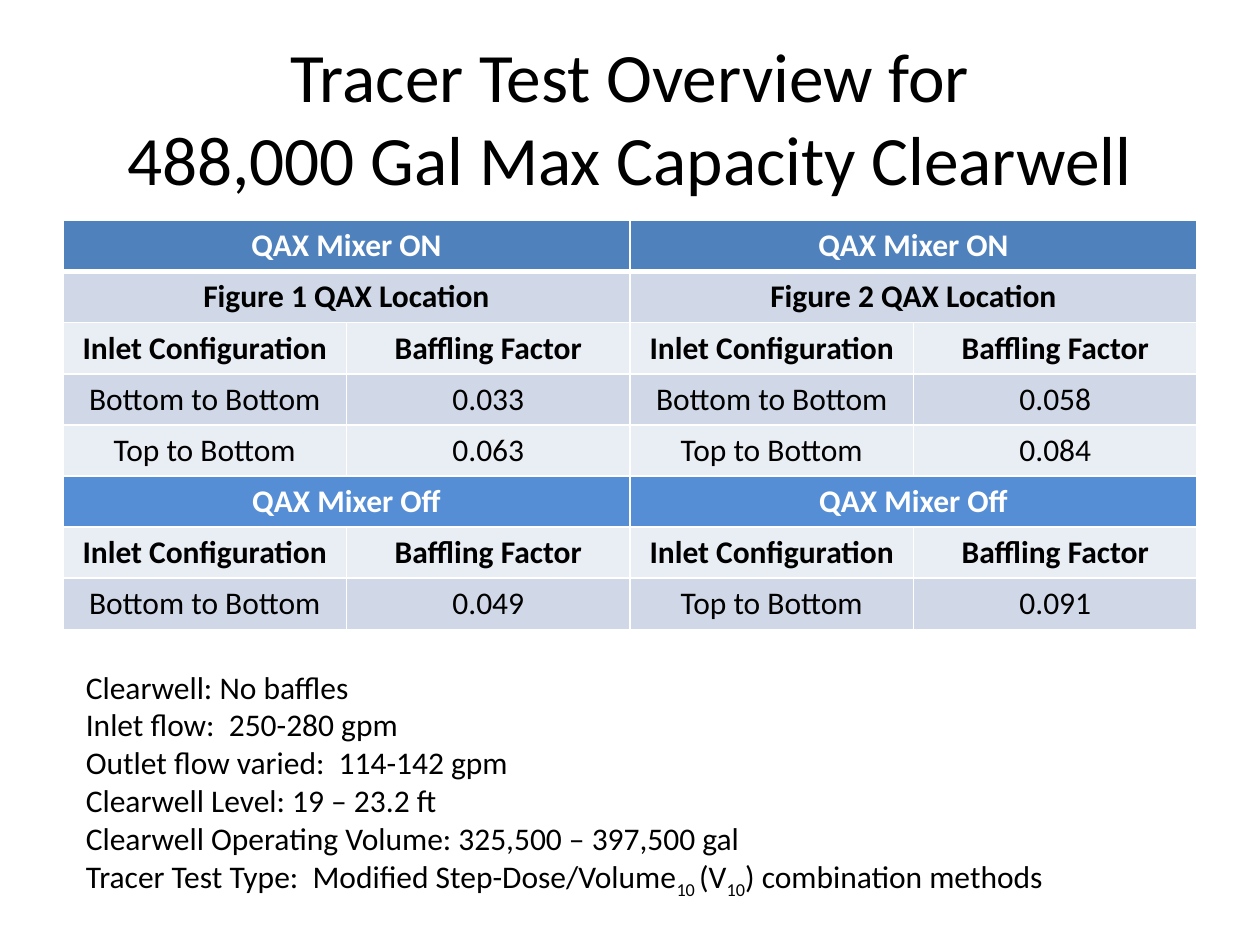
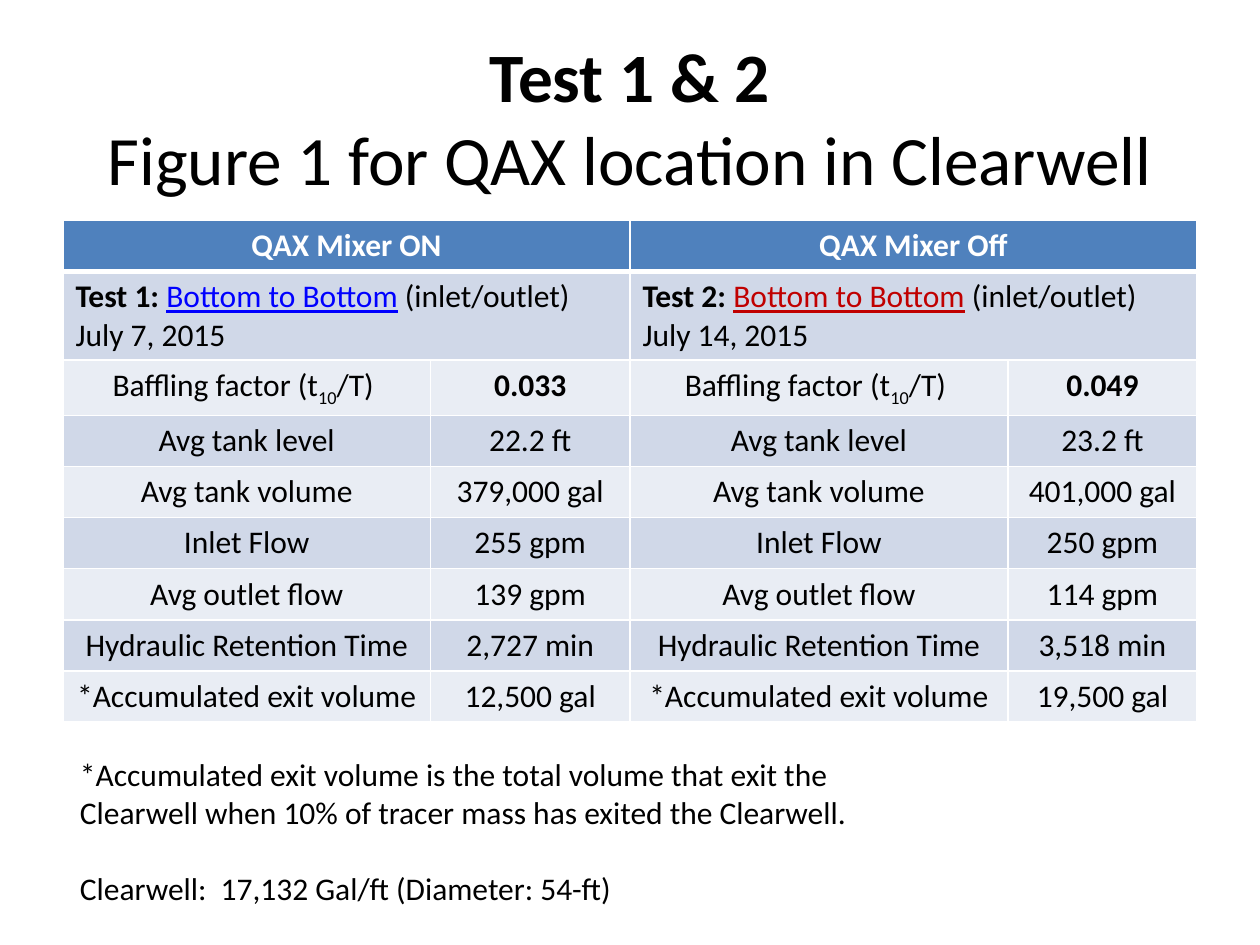
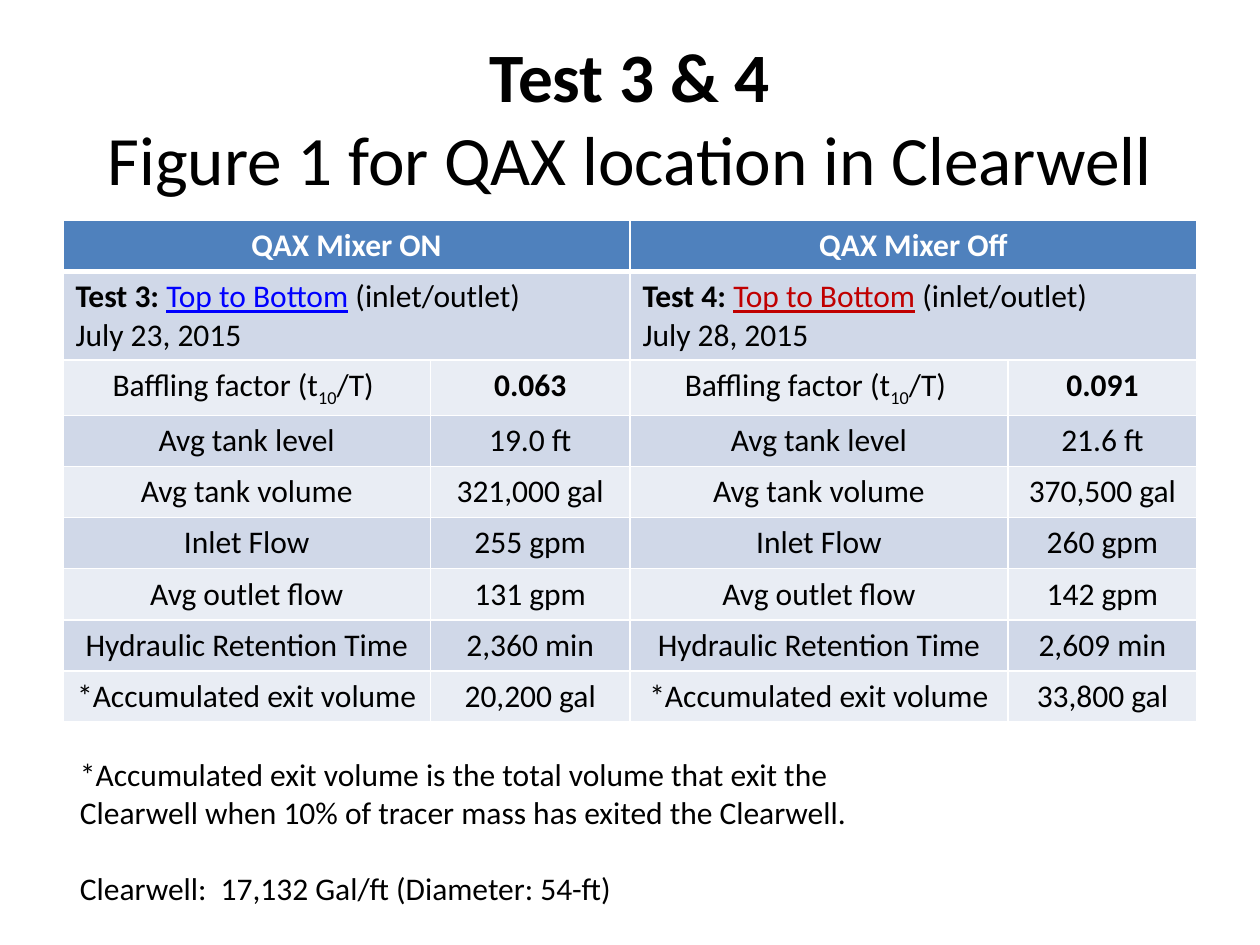
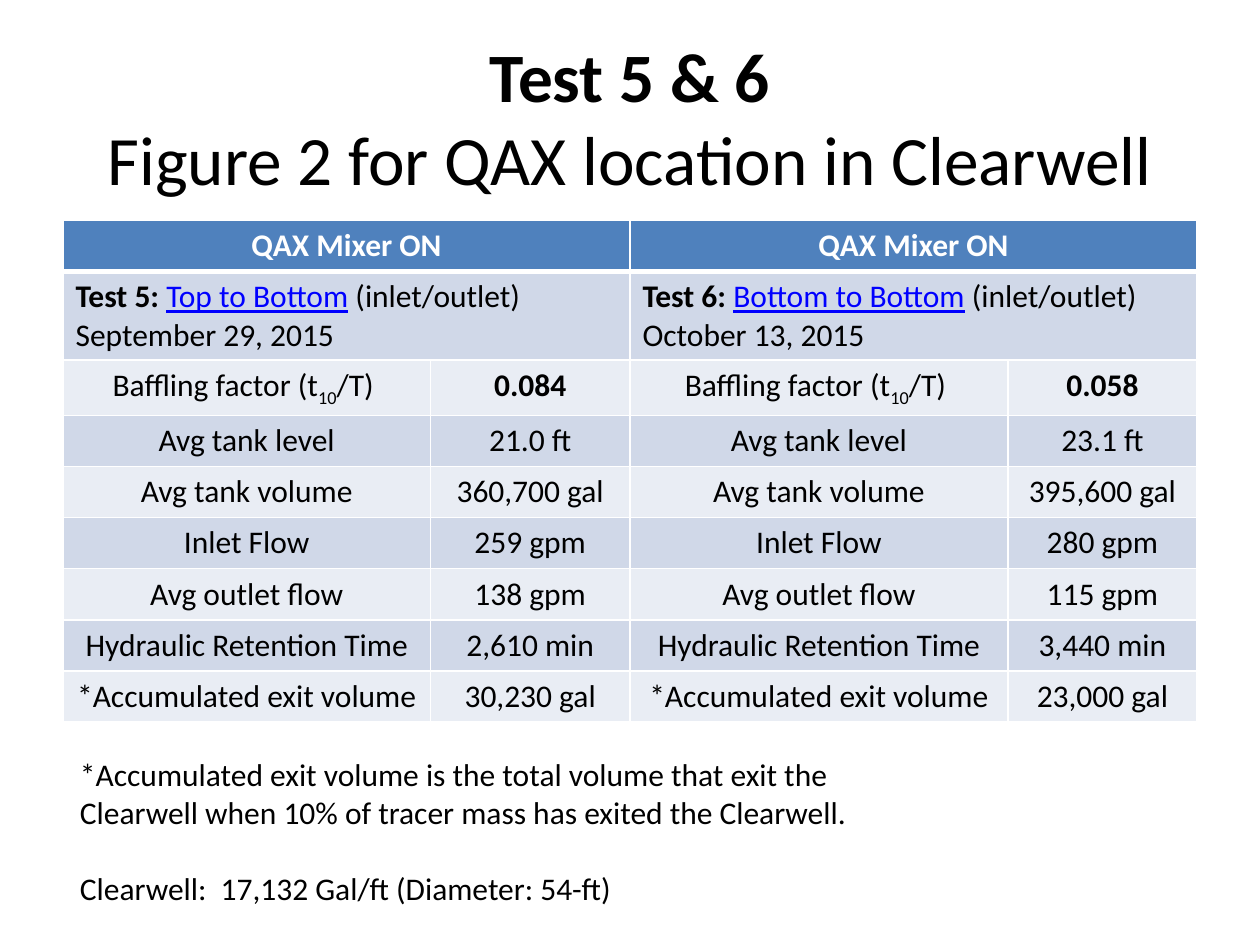
from lxml import etree
from pptx import Presentation
from pptx.dml.color import RGBColor
from pptx.enum import text as tx
from pptx.oxml import ns
from pptx.util import Pt

HUES = {"ink": "000000", "white": "FFFFFF", "head": "4F81BD", "off": "558ED5",
        "dark": "D0D8E8", "pale": "E9EDF4", "blue": "0000FF", "red": "C00000"}
FONT = "Calibri"
ROW = 29.2
MID = tx.PP_ALIGN.CENTER


def write(par, words, bold=False, hue="ink", line=False):
    """Add words to a paragraph; parts between underscores are subscripts."""
    par.font.name = FONT
    par.font.size = par.font.size or Pt(18)
    for n, part in enumerate(words.split("_")):
        run = par.add_run()
        run.text = part
        run.font.bold = bold
        run.font.color.rgb = RGBColor.from_string(HUES[hue])
        if line:
            run.font.underline = True
        if n % 2:
            run.font._element.set("baseline", "-25000")


def edge(cell, side, width):
    """Give one side of a cell a white border."""
    ln = etree.SubElement(cell._tc.get_or_add_tcPr(), ns.qn("a:ln" + side), w=str(Pt(width)))
    fill = etree.SubElement(ln, ns.qn("a:solidFill"))
    etree.SubElement(fill, ns.qn("a:srgbClr"), val=HUES["white"])


# Cells: "#" marks bold; a tuple holds test, route, route colour and date.
# A row of two cells spans the four columns.
ON, OFF = "#QAX Mixer ON", "#QAX Mixer Off"
heads = ["#Inlet Configuration", "#Baffling Factor"] * 2
low, top = "Bottom to Bottom", "Top to Bottom"
pages = [{
    "title": [("Tracer Test Overview for", False),
              ("488,000 Gal Max Capacity Clearwell", False)],
    "cols": [162] * 4,
    "rows": [[ON, ON],
             ["#Figure 1 QAX Location", "#Figure 2 QAX Location"],
             heads,
             [low, "0.033", low, "0.058"],
             [top, "0.063", top, "0.084"],
             [OFF, OFF],
             heads,
             [low, "0.049", top, "0.091"]],
    "box": (42, 378, 570, 138),
    "notes": [("Clearwell: No baffles", 0),
              ("Inlet flow:  250-280 gpm", 0),
              ("Outlet flow varied:  114-142 gpm", 0),
              ("Clearwell Level: 19 – 23.2 ft", 0),
              ("Clearwell Operating Volume: 325,500 – 397,500 gal", 0),
              ("Tracer Test Type:  Modified Step-Dose/Volume_10 _(V_10_) combination methods", 0)],
}]

names = ["Baffling factor (t_10_/T) ", "Avg tank level", "Avg tank volume", "Inlet Flow",
         "Avg outlet flow", "Hydraulic Retention Time", "*Accumulated exit volume"]
units = ["", " ft", " gal", " gpm", " gpm", " min", " gal"]
pairs = [
    (1, [(ON, low, "blue", "July 7, 2015",
          ["#0.033", "22.2", "379,000", "255", "139", "2,727", "12,500"]),
         (OFF, low, "red", "July 14, 2015",
          ["#0.049", "23.2", "401,000", "250", "114", "3,518", "19,500"])]),
    (1, [(ON, top, "blue", "July 23, 2015",
          ["#0.063", "19.0", "321,000", "255", "131", "2,360", "20,200"]),
         (OFF, top, "red", "July 28, 2015",
          ["#0.091", "21.6", "370,500", "260", "142", "2,609", "33,800"])]),
    (2, [(ON, top, "blue", "September 29, 2015",
          ["#0.084", "21.0", "360,700", "259", "138", "2,610", "30,230"]),
         (ON, low, "blue", "October 13, 2015",
          ["#0.058", "23.1", "395,600", "280", "115", "3,440", "23,000"])]),
]
for n, (fig, tests) in enumerate(pairs):
    first = 2 * n + 1
    rows = [[t[0] for t in tests],
            [(f"Test {first + i}: ", *t[1:4]) for i, t in enumerate(tests)]]
    for name, unit, a, b in zip(names, units, tests[0][4], tests[1][4]):
        rows.append([name, a + unit, name, b + unit])
    pages.append({
        "title": [(f"Test {first} & {first + 1}", True),
                  (f"Figure {fig} for QAX location in Clearwell", False)],
        "cols": [210, 114, 216, 108],
        "rows": rows,
        "box": (38.6, 428, 492, 94.5),
        "notes": [("*Accumulated exit volume is the total volume that exit the Clearwell "
                   "when 10% of tracer mass has exited the Clearwell.", 0),
                  ("Clearwell:  17,132 Gal/ft (Diameter: 54-ft)", 22)],
    })

deck = Presentation()
deck.slide_width, deck.slide_height = Pt(720), Pt(540)

for page in pages:
    slide = deck.slides.add_slide(deck.slide_layouts[6])

    frame = slide.shapes.add_textbox(Pt(36), Pt(21.6), Pt(648), Pt(90)).text_frame
    frame.word_wrap = True
    frame.vertical_anchor = tx.MSO_ANCHOR.MIDDLE
    par = frame.paragraphs[0]
    par.alignment = MID
    par.font.size = Pt(39.6)
    for n, (words, bold) in enumerate(page["title"]):
        if n:
            par.add_line_break()
        write(par, words, bold)

    rows = page["rows"]
    table = slide.shapes.add_table(len(rows), 4, Pt(36), Pt(126), Pt(648),
                                   Pt(ROW * len(rows))).table
    table.first_row = table.horz_banding = False
    for col, width in zip(table.columns, page["cols"]):
        col.width = Pt(width)
    for r, row in enumerate(rows):
        tall = isinstance(row[0], tuple)
        table.rows[r].height = Pt(50.4 if tall else ROW)
        band = "head" if r == 0 else "off" if row[0] == OFF else "dark" if r % 2 else "pale"
        for c in range(4):
            cell = table.cell(r, c)
            for side in "LRTB":
                edge(cell, side, 3 if (r, side) in ((0, "B"), (1, "T")) else 1)
            cell.fill.solid()
            cell.fill.fore_color.rgb = RGBColor.from_string(HUES[band])
        step = 4 // len(row)
        for n, item in enumerate(row):
            cell = table.cell(r, n * step)
            if step == 2:
                cell.merge(table.cell(r, n * step + 1))
            par = cell.text_frame.paragraphs[0]
            if tall:
                test, route, hue, date = item
                write(par, test, True)
                write(par, route, hue=hue, line=True)
                write(par, " (inlet/outlet)")
                write(cell.text_frame.add_paragraph(), date)
            else:
                par.alignment = MID
                write(par, item.lstrip("#"), item.startswith("#"),
                      "white" if band in ("head", "off") else "ink")

    frame = slide.shapes.add_textbox(*map(Pt, page["box"])).text_frame
    frame.word_wrap = True
    frame.auto_size = tx.MSO_AUTO_SIZE.SHAPE_TO_FIT_TEXT
    for n, (words, gap) in enumerate(page["notes"]):
        par = frame.add_paragraph() if n else frame.paragraphs[0]
        par.space_before = Pt(gap)
        write(par, words)

deck.save("out.pptx")
